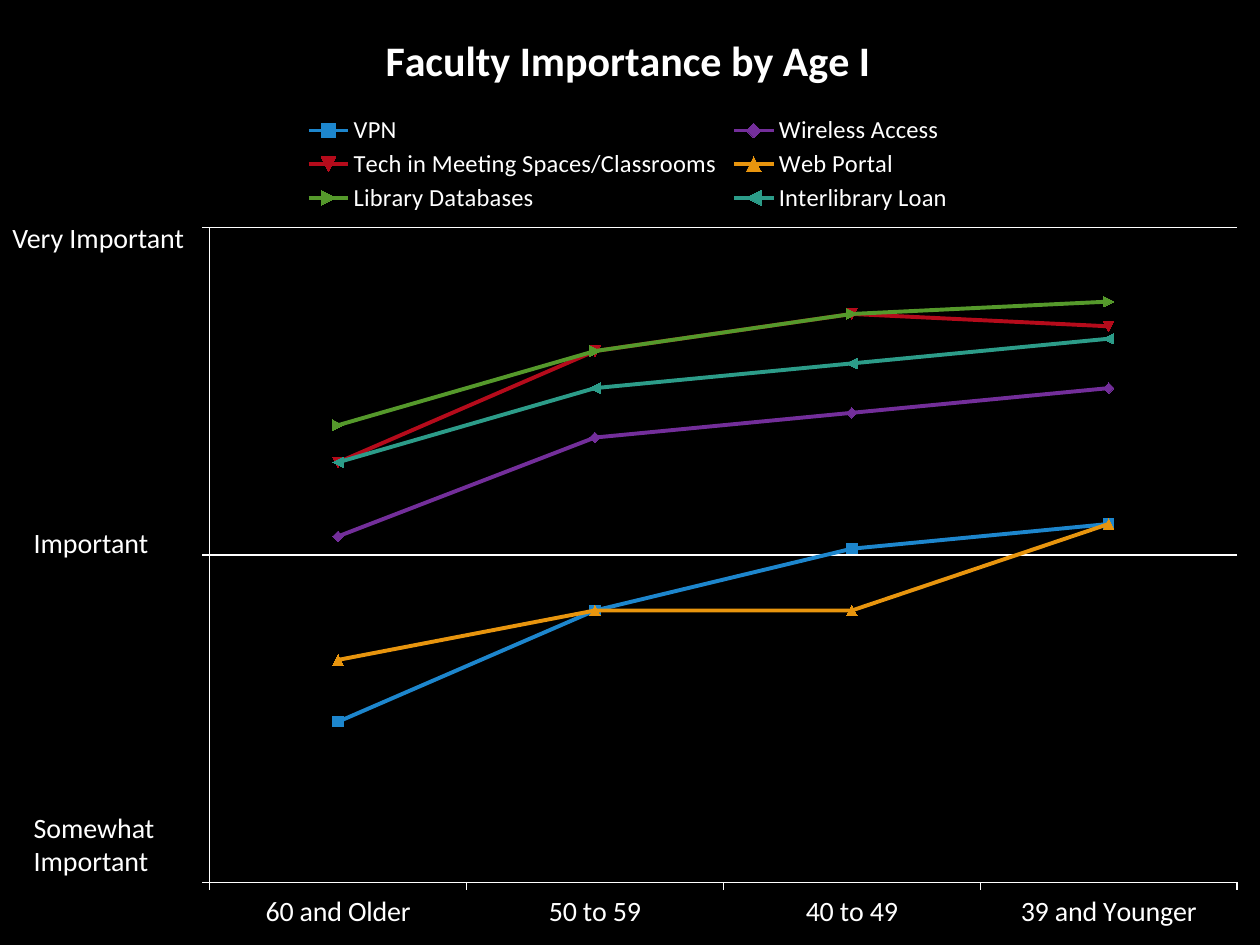
from lxml.etree import SubElement
from pptx import Presentation
from pptx.chart.data import CategoryChartData
from pptx.dml.color import RGBColor
from pptx.enum.chart import XL_CHART_TYPE, XL_LEGEND_POSITION, XL_TICK_LABEL_POSITION, XL_TICK_MARK
from pptx.enum.text import MSO_AUTO_SIZE
from pptx.oxml import parse_xml
from pptx.oxml.ns import nsdecls, qn
from pptx.util import Cm, Pt

FONT = "Calibri"
WHITE = "FFFFFF"
BLACK = "000000"
TITLE = "Faculty Importance by Age I"
AGES = ["60 and Older", "50 to 59", "40 to 49", "39 and Younger"]
SERVICES = [
    ("VPN", "1D86CD", (66, 75, 80, 82)),
    ("Wireless Access", "732E9A", (81, 89, 91, 93)),
    ("Tech in Meeting Spaces/Classrooms", "B50B1B", (87, 96, 99, 98)),
    ("Web Portal", "E8950E", (71, 75, 75, 82)),
    ("Library Databases", "55992B", (90, 96, 99, 100)),
    ("Interlibrary Loan", "2C9C89", (87, 93, 95, 97)),
]
SCALE_LABELS = [
    ("Very Important", 0, 4.32, 4.24, 0.94),
    ("Important", 0.43, 10.46, 2.97, 0.94),
    ("Somewhat \vImportant", 0.43, 16.21, 3.07, 1.63),
]
SCALE_MINIMUM, SCALE_MAXIMUM = 53, 106
PLOT_AREA = (0.169, 0.242, 0.813, 0.692)
LEGEND_AREA = (0.24, 0.12, 0.52, 0.11)


def color(value):
    return RGBColor.from_string(value)


def format_font(font, size, bold=False):
    font.name = FONT
    font.size = Pt(size)
    font.bold = bold
    font.color.rgb = color(WHITE)


def write(text_frame, text, size=16, bold=False):
    paragraph = text_frame.paragraphs[0]
    paragraph.text = text
    for run in paragraph.runs:
        format_font(run.font, size, bold)


def paint_line(line, value, width):
    line.color.rgb = color(value)
    line.width = Pt(width)


def make_layout(area, inner=False):
    layout = parse_xml(f"<c:layout {nsdecls('c')}/>")
    manual = SubElement(layout, qn("c:manualLayout"))
    settings = [("layoutTarget", "inner")] if inner else []
    settings += [("xMode", "edge"), ("yMode", "edge")]
    settings += zip("xywh", area)
    for name, value in settings:
        SubElement(manual, qn(f"c:{name}")).set("val", str(value))
    return layout


def remove_layout(element):
    for layout in element.findall(qn("c:layout")):
        element.remove(layout)


def place_chart_parts(chart):
    space = chart.element
    plot_area = space.find(".//" + qn("c:plotArea"))
    remove_layout(plot_area)
    plot_area.insert(0, make_layout(PLOT_AREA, inner=True))
    legend = space.find(".//" + qn("c:legend"))
    remove_layout(legend)
    legend.find(qn("c:legendPos")).addnext(make_layout(LEGEND_AREA))
    space.find(qn("c:chart")).addnext(parse_xml(
        f"<c:spPr {nsdecls('c', 'a')}><a:solidFill><a:srgbClr val='{BLACK}'/></a:solidFill>"
        "<a:ln><a:noFill/></a:ln></c:spPr>"))


def add_importance_chart(slide):
    data = CategoryChartData(number_format="0")
    data.categories = AGES
    for name, _, values in SERVICES:
        data.add_series(name, values)
    chart = slide.shapes.add_chart(
        XL_CHART_TYPE.LINE_MARKERS, Cm(-0.08), Cm(-0.03), Cm(25.48), Cm(19.08), data).chart
    format_font(chart.font, 10)
    chart.has_title = True
    write(chart.chart_title.text_frame, TITLE, size=24, bold=True)
    chart.chart_title.include_in_layout = False
    chart.has_legend = True
    chart.legend.position = XL_LEGEND_POSITION.TOP
    chart.legend.include_in_layout = False
    format_font(chart.legend.font, 14)
    chart.plots[0].vary_by_categories = False

    for series, (_, shade, _) in zip(chart.plots[0].series, SERVICES):
        series.smooth = False
        paint_line(series.format.line, shade, 2.25)
        series.marker.size = 6
        series.marker.format.fill.solid()
        series.marker.format.fill.fore_color.rgb = color(shade)
        paint_line(series.marker.format.line, shade, 0.75)

    for axis in (chart.category_axis, chart.value_axis):
        axis.major_tick_mark = XL_TICK_MARK.OUTSIDE
        axis.minor_tick_mark = XL_TICK_MARK.NONE
        format_font(axis.tick_labels.font, 16)
        paint_line(axis.format.line, WHITE, 0.75)
    value_axis = chart.value_axis
    value_axis.minimum_scale = SCALE_MINIMUM
    value_axis.maximum_scale = SCALE_MAXIMUM
    value_axis.major_unit = (SCALE_MAXIMUM - SCALE_MINIMUM) / 2
    value_axis.tick_labels.number_format = "0.00"
    value_axis.tick_labels.number_format_is_linked = False
    value_axis.tick_label_position = XL_TICK_LABEL_POSITION.NONE
    value_axis.has_major_gridlines = True
    paint_line(value_axis.major_gridlines.format.line, WHITE, 0.75)
    place_chart_parts(chart)


def add_scale_label(slide, text, *box):
    text_frame = slide.shapes.add_textbox(*map(Cm, box)).text_frame
    text_frame.word_wrap = False
    text_frame.auto_size = MSO_AUTO_SIZE.SHAPE_TO_FIT_TEXT
    write(text_frame, text)


def main():
    presentation = Presentation()
    presentation.slide_width = Cm(25.4)
    presentation.slide_height = Cm(19.05)
    slide = presentation.slides.add_slide(presentation.slide_layouts[6])
    slide.background.fill.solid()
    slide.background.fill.fore_color.rgb = color(BLACK)
    add_importance_chart(slide)
    for label in SCALE_LABELS:
        add_scale_label(slide, *label)
    presentation.save("out.pptx")


if __name__ == "__main__":
    main()
